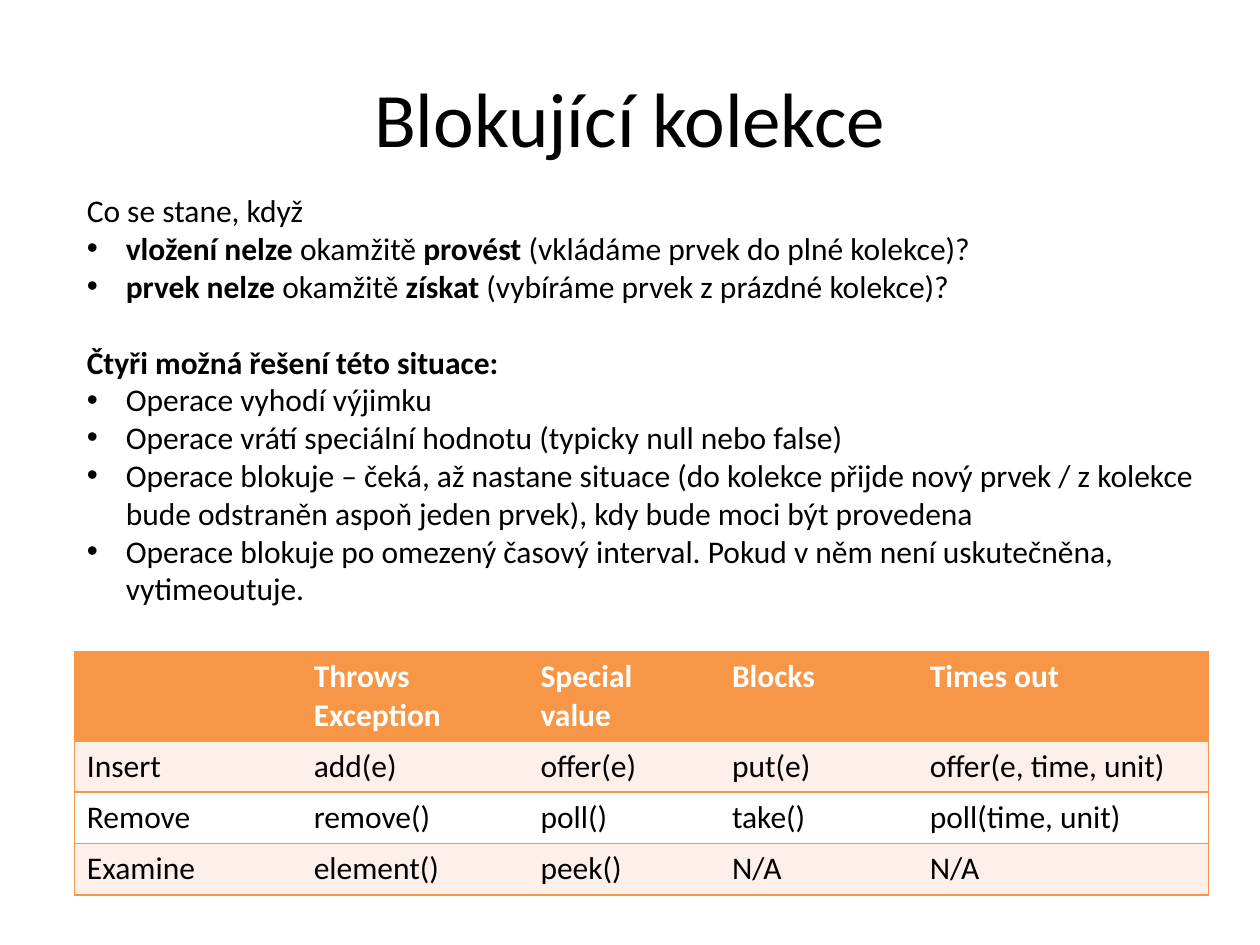
from pptx import Presentation
from pptx.dml.color import RGBColor
from pptx.enum.text import MSO_ANCHOR as ANCHOR, MSO_AUTO_SIZE as AUTO, PP_ALIGN as ALIGN
from pptx.oxml import parse_xml
from pptx.oxml.ns import nsdecls
from pptx.util import Inches, Pt

ORANGE = RGBColor(0xF7, 0x96, 0x46)
PALE = RGBColor(0xFD, 0xEF, 0xE9)
WHITE = RGBColor(0xFF, 0xFF, 0xFF)
BLACK = RGBColor(0, 0, 0)

# Grid of the slide: 100 columns by 150 rows
SLIDE_W, SLIDE_H = Inches(10), Inches(7.5)
COL, ROW = SLIDE_W / 100, SLIDE_H / 150

TITLE = "Blokující kolekce"
# (bulleted, space before in points, lines of (text, bold) runs)
BODY = [
    (False, 0, [[("Co se stane, když", False)]]),
    (True, 0, [[("vložení nelze ", True), ("okamžitě ", False), ("provést", True),
                (" (vkládáme prvek do plné kolekce)?", False)]]),
    (True, 0, [[("prvek nelze ", True), ("okamžitě ", False), ("získat", True),
                (" (vybíráme prvek z prázdné kolekce)?", False)]]),
    (False, 21.6, [[("Čtyři možná řešení této situace:", True)]]),
    (True, 0, [[("Operace vyhodí výjimku", False)]]),
    (True, 0, [[("Operace vrátí speciální hodnotu (typicky null nebo false)", False)]]),
    (True, 0, [[("Operace blokuje – čeká, až nastane situace "
                 "(do kolekce přijde nový prvek / z kolekce ", False)],
               [("bude odstraněn aspoň jeden prvek), kdy bude moci být provedena", False)]]),
    (True, 0, [[("Operace blokuje po omezený časový interval. "
                 "Pokud v něm není uskutečněna, ", False)],
               [("vytimeoutuje.", False)]]),
]
METHODS = [
    ["", "Throws Exception", "Special value", "Blocks", "Times out"],
    ["Insert", "add(e)", "offer(e)", "put(e)", "offer(e, time, unit)"],
    ["Remove", "remove()", "poll()", "take()", "poll(time, unit)"],
    ["Examine", "element()", "peek()", "N/A", "N/A"],
]
COL_SPANS = [18, 18, 15.2, 15.7, 23.1]
ROW_SPANS = [14.2, 8.15, 8.15, 8.15]


def grid_box(left, top, width, height):
    return int(left * COL), int(top * ROW), int(width * COL), int(height * ROW)


def add_run(p, text, size=18, bold=False, color=BLACK):
    r = p.add_run()
    r.text = text
    for name, value in {"name": "Calibri", "size": Pt(size), "bold": bold}.items():
        setattr(r.font, name, value)
    r.font.color.rgb = color


def add_bullet(p):
    pPr = p._p.get_or_add_pPr()
    pPr.set("marL", str(Inches(0.31)))
    pPr.set("indent", str(-Inches(0.31)))
    for tag in ('<a:buFont {} typeface="Arial"/>', '<a:buChar {} char="•"/>'):
        pPr.append(parse_xml(tag.format(nsdecls("a"))))


def set_borders(cell, orange_sides):
    tcPr = cell._tc.get_or_add_tcPr()
    for i, side in enumerate("LRTB"):
        fill = (f'<a:solidFill><a:srgbClr val="{ORANGE}"/></a:solidFill>'
                if side in orange_sides else "<a:noFill/>")
        tcPr.insert(i, parse_xml(f'<a:ln{side} {nsdecls("a")} w="{Pt(1)}">{fill}</a:ln{side}>'))


def add_title(s, box):
    tf = s.shapes.add_textbox(*box).text_frame
    for name, value in {"word_wrap": True, "vertical_anchor": ANCHOR.MIDDLE}.items():
        setattr(tf, name, value)
    p = tf.paragraphs[0]
    p.alignment = ALIGN.CENTER
    add_run(p, TITLE, size=44)


def add_body(s, box):
    tf = s.shapes.add_textbox(*box).text_frame
    for name, value in {"word_wrap": False, "auto_size": AUTO.SHAPE_TO_FIT_TEXT}.items():
        setattr(tf, name, value)
    for i, (bulleted, before, lines) in enumerate(BODY):
        p = tf.add_paragraph() if i else tf.paragraphs[0]
        p.alignment = ALIGN.LEFT
        p.space_before = Pt(before)
        if bulleted:
            add_bullet(p)
        for j, line in enumerate(lines):
            if j:
                p.add_line_break()
            for text, bold in line:
                add_run(p, text, bold=bold)


def add_method_table(s, box):
    table = s.shapes.add_table(len(METHODS), len(COL_SPANS), *box).table
    table.first_row = table.horz_banding = False
    for column, span in zip(table.columns, COL_SPANS):
        column.width = int(span * COL)
    for row, span in zip(table.rows, ROW_SPANS):
        row.height = int(span * ROW)
    last = len(COL_SPANS) - 1
    for i, texts in enumerate(METHODS):
        header = i == 0
        for j, text in enumerate(texts):
            cell = table.cell(i, j)
            cell.fill.solid()
            cell.fill.fore_color.rgb = ORANGE if header else PALE if i % 2 else WHITE
            set_borders(cell, "TB" + "L" * (j == 0) + "R" * (j == last))
            p = cell.text_frame.paragraphs[0]
            if text:
                add_run(p, text, bold=header, color=WHITE if header else BLACK)


def main():
    prs = Presentation()
    prs.slide_width, prs.slide_height = SLIDE_W, SLIDE_H
    s = prs.slides.add_slide(prs.slide_layouts[6])
    add_title(s, grid_box(5, 6, 90, 25))
    add_method_table(s, grid_box(5.9, 103.4, sum(COL_SPANS), sum(ROW_SPANS)))
    add_body(s, grid_box(5.9, 29.4, 91.1, 68.6))
    prs.save("out.pptx")


if __name__ == "__main__":
    main()
